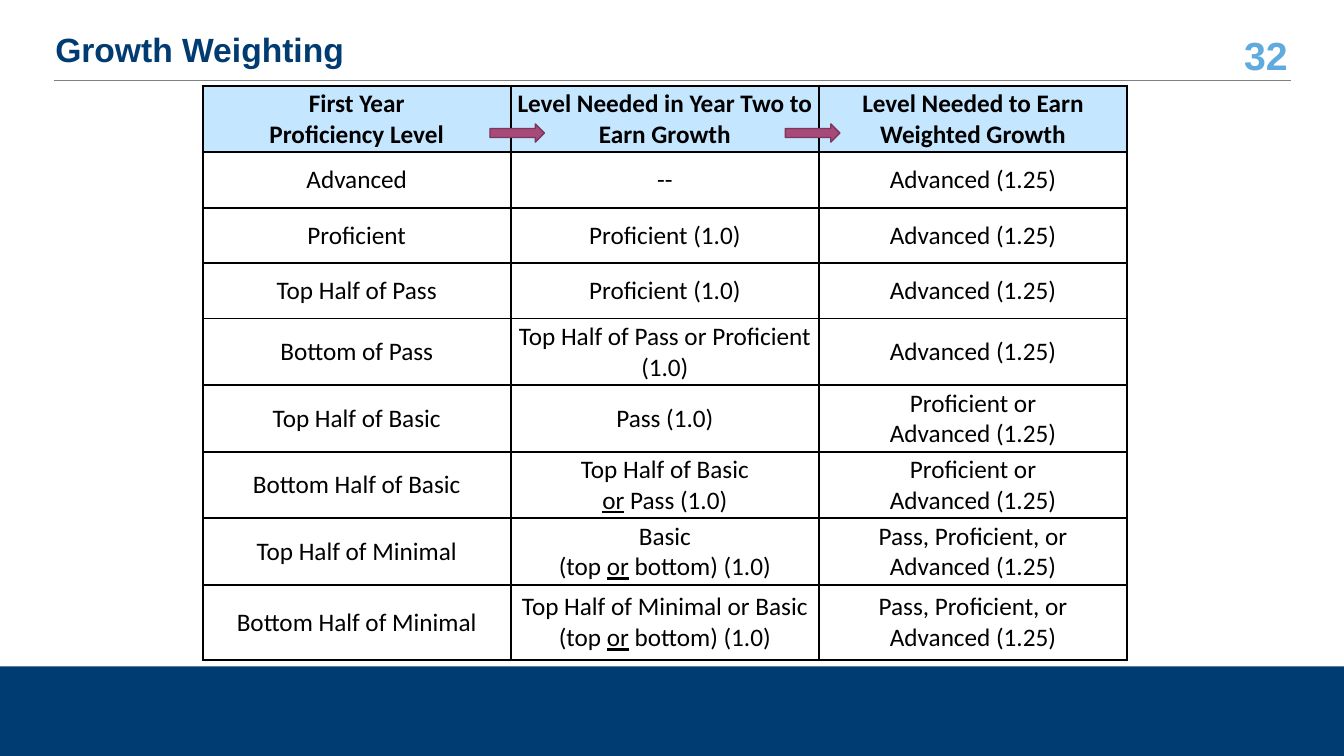
from dataclasses import dataclass

from lxml import etree
from pptx import Presentation
from pptx.dml.color import RGBColor
from pptx.enum.shapes import MSO_CONNECTOR, MSO_SHAPE
from pptx.enum.text import MSO_ANCHOR, PP_ALIGN
from pptx.oxml.ns import qn
from pptx.util import Inches, Pt

RECTANGLE, RIGHT_ARROW = MSO_SHAPE.RECTANGLE, MSO_SHAPE.RIGHT_ARROW
STRAIGHT = MSO_CONNECTOR.STRAIGHT
TOP, MIDDLE = MSO_ANCHOR.TOP, MSO_ANCHOR.MIDDLE
LEFT, CENTER, RIGHT = PP_ALIGN.LEFT, PP_ALIGN.CENTER, PP_ALIGN.RIGHT


@dataclass(frozen=True)
class Theme:
    navy: str = "003B71"
    sky: str = "5FAADE"
    header_fill: str = "C5E6FF"
    rule: str = "808080"
    ink: str = "000000"
    arrow_fill: str = "A74979"
    arrow_line: str = "7C365A"
    heading_font: str = "Arial"
    table_font: str = "Calibri"
    title_size: float = 24
    number_size: float = 28
    table_size: float = 18
    border_width: float = 1.5


THEME = Theme()

# A line break starts a new paragraph; underscores enclose underlined words.
GROWTH_ROWS = [
    ("First Year\nProficiency Level", "Level Needed in Year Two to Earn Growth",
     "Level Needed to Earn Weighted Growth"),
    ("Advanced", "--", "Advanced (1.25)"),
    ("Proficient", "Proficient (1.0)", "Advanced (1.25)"),
    ("Top Half of Pass", "Proficient (1.0)", "Advanced (1.25)"),
    ("Bottom of Pass", "Top Half of Pass or Proficient (1.0)", "Advanced (1.25)"),
    ("Top Half of Basic", "Pass (1.0)", "Proficient or\nAdvanced (1.25)"),
    ("Bottom Half of Basic", "Top Half of Basic\n_or_ Pass (1.0)",
     "Proficient or\nAdvanced (1.25)"),
    ("Top Half of Minimal", "Basic\n(top _or_ bottom) (1.0)",
     "Pass, Proficient, or\nAdvanced (1.25)"),
    ("Bottom Half of Minimal", "Top Half of Minimal or Basic (top _or_ bottom) (1.0)",
     "Pass, Proficient, or\nAdvanced (1.25)"),
]
ROW_HEIGHTS = [0.64] + [0.55] * 3 + [0.64] * 4 + [0.75]


def color(value):
    return RGBColor.from_string(value)


def write_text(frame, text, *, font, size, ink, bold=False, align=LEFT, spacing=None):
    for index, line in enumerate(text.split("\n")):
        paragraph = frame.add_paragraph() if index else frame.paragraphs[0]
        paragraph.alignment = align
        if spacing:
            paragraph.line_spacing = spacing
        for position, part in enumerate(line.split("_")):
            if not part:
                continue
            run = paragraph.add_run()
            run.text = part
            run.font.name, run.font.size = font, Pt(size)
            run.font.bold = bold
            run.font.color.rgb = color(ink)
            if position % 2:
                run.font.underline = True


def add_text_box(slide, box, text, **text_format):
    frame = slide.shapes.add_textbox(*map(Inches, box)).text_frame
    frame.word_wrap = True
    frame.vertical_anchor = MIDDLE
    write_text(frame, text, font=THEME.heading_font, bold=True, **text_format)


def add_block(slide, kind, box, fill, line=None):
    shape = slide.shapes.add_shape(kind, *map(Inches, box))
    shape.shadow.inherit = False
    shape.fill.solid()
    shape.fill.fore_color.rgb = color(fill)
    if line:
        shape.line.color.rgb = color(line)
        shape.line.width = Pt(1)
    else:
        shape.line.fill.background()


def add_header(slide, left, top, width):
    add_text_box(slide, (left + 11.62, top + 0.03, 0.8, 0.42), "32",
                 size=THEME.number_size, ink=THEME.sky, align=RIGHT)
    add_text_box(slide, (left, top, 11.6, 0.42), "Growth Weighting",
                 size=THEME.title_size, ink=THEME.navy, spacing=0.9)
    rule_y = Inches(top + 0.5)
    rule = slide.shapes.add_connector(
        STRAIGHT, Inches(left + 0.09), rule_y, Inches(left + width), rule_y)
    rule.line.color.rgb = color(THEME.rule)
    rule.line.width = Pt(0.5)
    etree.SubElement(rule._element.spPr, qn("a:effectLst"))


def set_borders(cell):
    """Draw all four sides; the lines must precede the cell's fill in the XML."""
    properties = cell._tc.get_or_add_tcPr()
    for index, side in enumerate(("a:lnL", "a:lnR", "a:lnT", "a:lnB")):
        line = etree.Element(qn(side), w=str(Pt(THEME.border_width)))
        fill = etree.SubElement(line, qn("a:solidFill"))
        etree.SubElement(fill, qn("a:srgbClr"), val=THEME.ink)
        properties.insert(index, line)


def add_growth_table(slide, left, top, width):
    columns = len(GROWTH_ROWS[0])
    table = slide.shapes.add_table(
        len(GROWTH_ROWS), columns, Inches(left), Inches(top), Inches(width),
        Inches(sum(ROW_HEIGHTS))).table
    table.horz_banding = False
    for column in table.columns:
        column.width = Inches(width / columns)
    for row_index, texts in enumerate(GROWTH_ROWS):
        is_header = row_index == 0
        table.rows[row_index].height = Inches(ROW_HEIGHTS[row_index])
        for column_index, text in enumerate(texts):
            cell = table.cell(row_index, column_index)
            cell.margin_left = cell.margin_right = Inches(0.06)
            cell.margin_top = cell.margin_bottom = Inches(0.03)
            cell.vertical_anchor = TOP if is_header else MIDDLE
            if is_header:
                cell.fill.solid()
                cell.fill.fore_color.rgb = color(THEME.header_fill)
            else:
                cell.fill.background()
            set_borders(cell)
            write_text(cell.text_frame, text, font=THEME.table_font,
                       size=THEME.table_size, ink=THEME.ink, bold=is_header,
                       align=CENTER)
    for arrow_offset in (2.85, 5.78):
        add_block(slide, RIGHT_ARROW, (left + arrow_offset, top + 0.38, 0.54, 0.18),
                  THEME.arrow_fill, THEME.arrow_line)


def main():
    presentation = Presentation()
    presentation.slide_width = Inches(13.33)
    presentation.slide_height = Inches(7.5)
    slide = presentation.slides.add_slide(presentation.slide_layouts[6])
    add_block(slide, RECTANGLE, (-0.01, 6.61, 13.34, 0.95), THEME.navy)
    add_header(slide, left=0.45, top=0.3, width=12.35)
    add_growth_table(slide, left=2.01, top=0.85, width=9.17)
    presentation.save("out.pptx")


if __name__ == "__main__":
    main()
